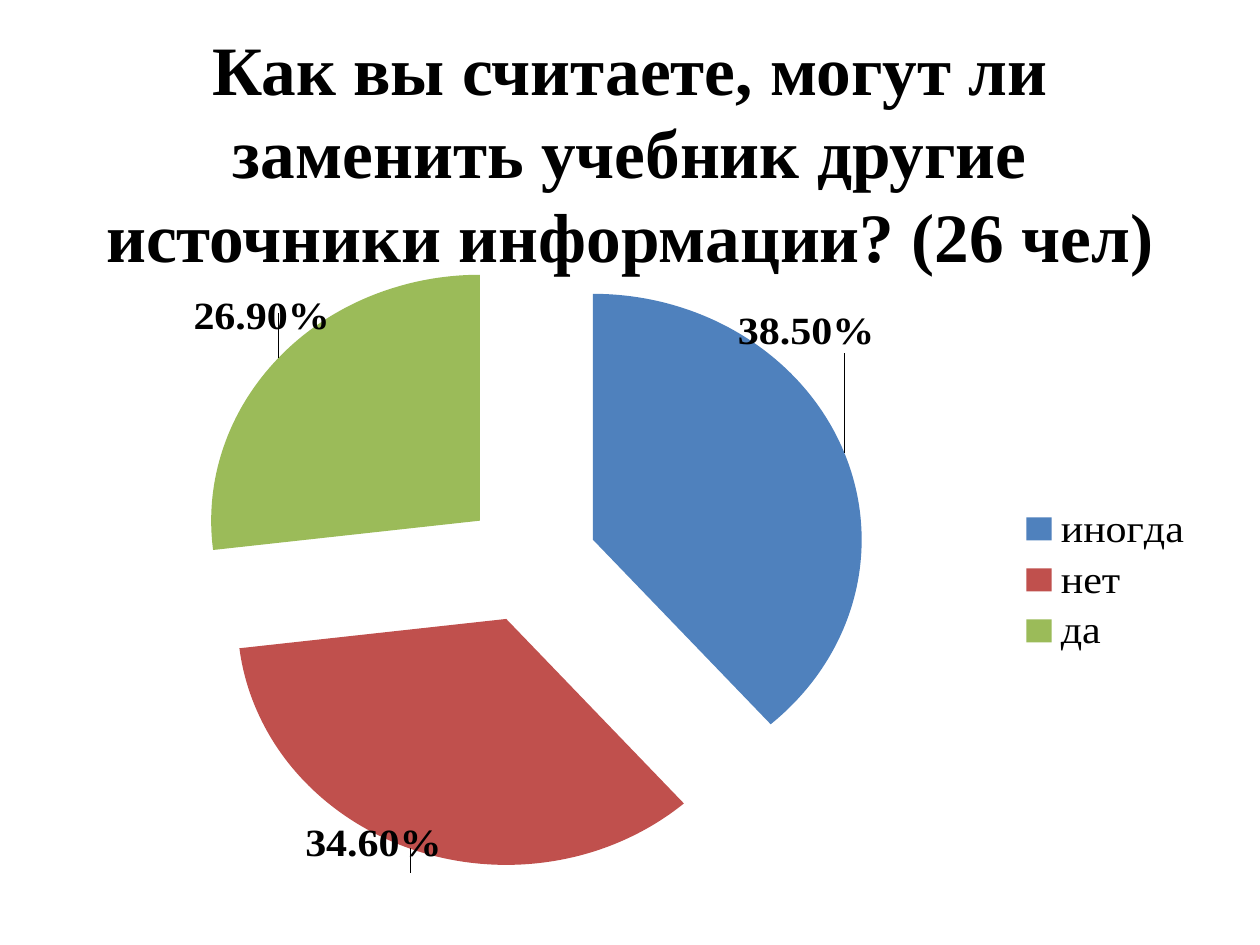
from lxml.etree import SubElement
from pptx import Presentation
from pptx.chart.data import CategoryChartData
from pptx.dml.color import RGBColor
from pptx.enum.chart import XL_CHART_TYPE, XL_LABEL_POSITION, XL_LEGEND_POSITION
from pptx.enum.text import MSO_ANCHOR, PP_ALIGN
from pptx.oxml.ns import qn
from pptx.util import Pt

TITLE = "Как вы считаете, могут ли заменить учебник другие источники информации? (26 чел)"
FONT = "Times New Roman"
COLORS = {"text": "000000", "blue": "4F81BD", "red": "C0504D", "green": "9BBB59"}
# answer, share, colour, label shift as a fraction of the chart
SLICES = [
    ("иногда", 0.385, "blue", (-0.1, -0.17)),
    ("нет", 0.346, "red", (0.03, 0.03)),
    ("да", 0.269, "green", (0.05, -0.07)),
]
PLOT = {"x": 0.165, "y": 0.037, "w": 0.474, "h": 0.862}


def style(font, size, bold=False):
    font.name, font.size, font.bold = FONT, Pt(size), bold
    font.color.rgb = RGBColor.from_string(COLORS["text"])


def add_text(slide, text, box, size, bold=False, align=PP_ALIGN.CENTER):
    frame = slide.shapes.add_textbox(*map(Pt, box)).text_frame
    frame.word_wrap = True
    frame.vertical_anchor = MSO_ANCHOR.MIDDLE
    para = frame.paragraphs[0]
    para.alignment = align
    run = para.add_run()
    run.text = text
    style(run.font, size, bold)


def set_layout(parent, index, **values):
    """Place a chart part by hand; the layout becomes child number index."""
    for old in parent.findall(qn("c:layout")):
        parent.remove(old)
    layout = SubElement(parent, qn("c:layout"))
    parent.insert(index, layout)
    manual = SubElement(layout, qn("c:manualLayout"))
    for key, value in values.items():
        SubElement(manual, qn(f"c:{key}")).set("val", str(value))


def add_pie(slide, box):
    data = CategoryChartData(number_format="0.00%")
    data.categories = [part[0] for part in SLICES]
    data.add_series("Series 1", [part[1] for part in SLICES])
    chart = slide.shapes.add_chart(XL_CHART_TYPE.PIE, *map(Pt, box), data).chart
    chart.has_title = False
    chart.font.name, chart.font.size = "Calibri", Pt(10)
    chart.has_legend = True
    chart.legend.position = XL_LEGEND_POSITION.RIGHT
    chart.legend.include_in_layout = False
    style(chart.legend.font, 24)

    plot = chart.plots[0]
    plot.vary_by_categories = True
    series = plot.series[0]
    labels = series.data_labels
    labels.show_value = True
    labels.number_format, labels.number_format_is_linked = "0.00%", False
    style(labels.font, 24, bold=True)
    for i, (_, _, color, (x, y)) in enumerate(SLICES):
        point = series.points[i]
        point.format.fill.solid()
        point.format.fill.fore_color.rgb = RGBColor.from_string(COLORS[color])
        label = point.data_label
        style(label.font, 24, bold=True)
        label.position = XL_LABEL_POSITION.OUTSIDE_END
    for tag, (_, _, _, (x, y)) in zip(series._element.iter(qn("c:dLbl")), SLICES):
        set_layout(tag, 1, x=x, y=y)
    for tag in series._element.findall(qn("c:dPt")):
        burst = SubElement(tag, qn("c:explosion"))
        burst.set("val", "25")
        tag.find(qn("c:spPr")).addprevious(burst)
    area = chart._chartSpace.chart.plotArea
    set_layout(area, 0, layoutTarget="inner", xMode="edge", yMode="edge", **PLOT)


deck = Presentation()
deck.slide_width, deck.slide_height = Pt(720), Pt(540)
slide = deck.slides.add_slide(deck.slide_layouts[6])
add_text(slide, TITLE, (36, 21.6, 648, 129.6), 39.6, bold=True)
add_pie(slide, (42.5, 157, 648, 356.4))
deck.save("out.pptx")
